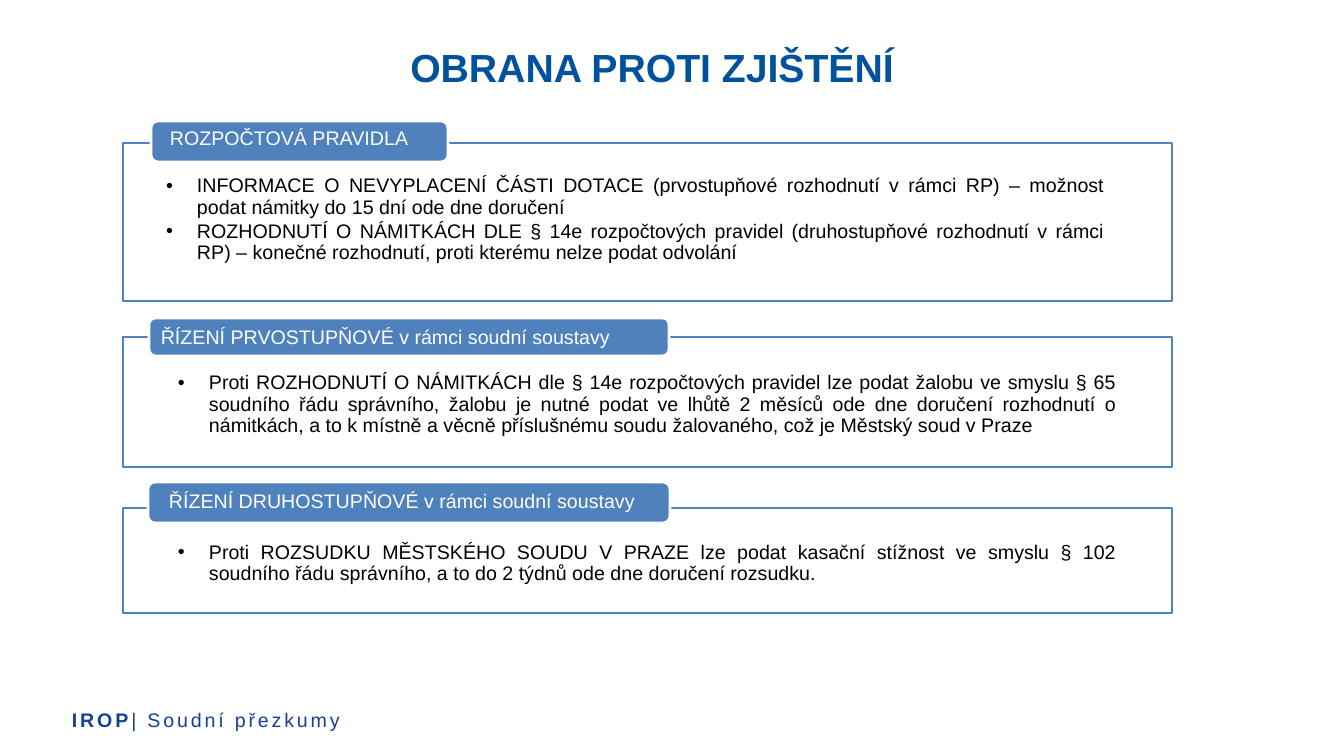
from dataclasses import dataclass
from typing import Any, NamedTuple

from lxml import etree
from pptx import Presentation
from pptx import util as u
from pptx.dml.color import RGBColor
from pptx.enum import shapes, text
from pptx.oxml.ns import qn

PX = 914400 / 100.8  # EMU in one px

WHITE = RGBColor(0xFF, 0xFF, 0xFF)
BLACK = RGBColor(0x00, 0x00, 0x00)
STEEL = RGBColor(0x4F, 0x81, 0xBD)
TITLE_BLUE = RGBColor(0x00, 0x52, 0x9C)
FOOTER_BLUE = RGBColor(0x16, 0x41, 0x93)

FRAME_LEFT, FRAME_WIDTH = 123, 1049
BULLET_INDENT = 31


class Box(NamedTuple):
    left: int
    top: int
    width: int
    height: int


class Insets(NamedTuple):
    left: int
    top: int
    right: int
    bottom: int


BODY_INSETS = Insets(55, 36, 55, 9)
DEFAULT_INSETS = Insets(10, 5, 10, 5)


@dataclass(frozen=True)
class Stage:
    heading: str
    tag: Box
    tag_insets: Insets
    tag_spacing: float
    frame_top: int
    frame_height: int
    body: Box
    points: tuple[str, ...]


STAGES = (
    Stage(
        "ROZPOČTOVÁ PRAVIDLA",
        Box(151, 121, 297, 41), Insets(17, 0, 17, 5), 0.9,
        143, 158, Box(111, 140, FRAME_WIDTH, 87),
        (
            "INFORMACE O NEVYPLACENÍ ČÁSTI DOTACE (prvostupňové rozhodnutí v rámci RP) – "
            "možnost podat námitky do 15 dní ode dne doručení",
            "ROZHODNUTÍ O NÁMITKÁCH DLE § 14e rozpočtových pravidel (druhostupňové "
            "rozhodnutí v rámci RP) – konečné rozhodnutí, proti kterému nelze podat odvolání",
        ),
    ),
    Stage(
        "ŘÍZENÍ PRVOSTUPŇOVÉ v rámci soudní soustavy",
        Box(149, 318, 520, 38), DEFAULT_INSETS, 1.0,
        337, 130, Box(FRAME_LEFT, 337, FRAME_WIDTH, 152),
        (
            "Proti ROZHODNUTÍ O NÁMITKÁCH dle § 14e rozpočtových pravidel lze podat žalobu "
            "ve smyslu § 65 soudního řádu správního, žalobu je nutné podat ve lhůtě 2 měsíců "
            "ode dne doručení rozhodnutí o námitkách, a to k místně a věcně příslušnému soudu "
            "žalovaného, což je Městský soud v Praze",
        ),
    ),
    Stage(
        "ŘÍZENÍ DRUHOSTUPŇOVÉ v rámci soudní soustavy",
        Box(148, 482, 522, 41), Insets(19, 0, 19, 0), 0.9,
        508, 105, Box(FRAME_LEFT, 508, FRAME_WIDTH, 114),
        (
            "Proti ROZSUDKU MĚSTSKÉHO SOUDU V PRAZE lze podat kasační stížnost ve smyslu "
            "§ 102 soudního řádu správního, a to do 2 týdnů ode dne doručení rozsudku.",
        ),
    ),
)


def px(length: int) -> u.Emu:
    return u.Emu(round(length * PX))


def apply(target: Any, formats: dict[str, Any]) -> None:
    for attribute, value in formats.items():
        setattr(target, attribute, value)


def style_font(font: Any, size: int, color: RGBColor, bold: bool = False) -> None:
    apply(font, {"name": "Arial", "size": u.Pt(size), "bold": bold})
    font.color.rgb = color


def set_frame(frame: Any, insets: Insets, anchor: Any) -> None:
    apply(frame, {
        "word_wrap": True,
        "vertical_anchor": anchor,
        "margin_left": px(insets.left),
        "margin_top": px(insets.top),
        "margin_right": px(insets.right),
        "margin_bottom": px(insets.bottom),
    })


def add_text_frame(slide: Any, box: Box, insets: Insets, anchor: Any) -> Any:
    frame = slide.shapes.add_textbox(*map(px, box)).text_frame
    set_frame(frame, insets, anchor)
    return frame


def add_panel(slide: Any, preset: Any, box: Box, fill: RGBColor, line: RGBColor) -> Any:
    panel = slide.shapes.add_shape(preset, *map(px, box))
    panel.shadow.inherit = False
    panel.fill.solid()
    panel.fill.fore_color.rgb = fill
    panel.line.color.rgb = line
    panel.line.width = u.Pt(2)
    return panel


def add_bullet(paragraph: Any) -> None:
    properties = paragraph._p.get_or_add_pPr()
    properties.set("marL", str(px(BULLET_INDENT)))
    properties.set("indent", str(-px(BULLET_INDENT)))
    etree.SubElement(properties, qn("a:buFont"), typeface="Arial")
    etree.SubElement(properties, qn("a:buChar"), char="•")


def add_stage(slide: Any, stage: Stage) -> None:
    # Outlined frame, slightly see-through
    outline = Box(FRAME_LEFT, stage.frame_top, FRAME_WIDTH, stage.frame_height)
    frame = add_panel(slide, shapes.MSO_SHAPE.RECTANGLE, outline, WHITE, STEEL)
    fill_color = frame._element.spPr.find(qn("a:solidFill"))[0]
    etree.SubElement(fill_color, qn("a:alpha"), val="90000")

    # Bulleted explanation
    body = add_text_frame(slide, stage.body, BODY_INSETS, text.MSO_ANCHOR.TOP)
    for index, point in enumerate(stage.points):
        paragraph = body.add_paragraph() if index else body.paragraphs[0]
        add_bullet(paragraph)
        apply(paragraph, {
            "text": point,
            "alignment": text.PP_ALIGN.JUSTIFY,
            "line_spacing": 0.9,
            "space_after": u.Pt(2),
        })
        style_font(paragraph.font, 14, BLACK)

    # Heading tag over the top edge
    tag = add_panel(slide, shapes.MSO_SHAPE.ROUNDED_RECTANGLE, stage.tag, STEEL, WHITE)
    set_frame(tag.text_frame, stage.tag_insets, text.MSO_ANCHOR.MIDDLE)
    heading = tag.text_frame.paragraphs[0]
    apply(heading, {
        "text": stage.heading,
        "alignment": text.PP_ALIGN.LEFT,
        "line_spacing": stage.tag_spacing,
    })
    style_font(heading.font, 14, WHITE)


def add_title(slide: Any) -> None:
    frame = add_text_frame(slide, Box(160, 38, 984, 79), DEFAULT_INSETS, text.MSO_ANCHOR.TOP)
    title = frame.paragraphs[0]
    apply(title, {"text": "OBRANA PROTI ZJIŠTĚNÍ", "alignment": text.PP_ALIGN.CENTER})
    style_font(title.font, 28, TITLE_BLUE, bold=True)


def add_footer(slide: Any) -> None:
    frame = add_text_frame(slide, Box(62, 700, 725, 40), DEFAULT_INSETS, text.MSO_ANCHOR.MIDDLE)
    for wording, bold in (("IROP", True), ("| Soudní přezkumy", False)):
        run = frame.paragraphs[0].add_run()
        run.text = wording
        style_font(run.font, 14, FOOTER_BLUE, bold)
        run._r.get_or_add_rPr().set("spc", "200")


def main() -> None:
    deck = Presentation()
    apply(deck, {"slide_width": px(1344), "slide_height": px(756)})
    slide = deck.slides.add_slide(deck.slide_layouts[6])
    add_footer(slide)
    add_title(slide)
    for stage in STAGES:
        add_stage(slide, stage)
    deck.save("out.pptx")


if __name__ == "__main__":
    main()
